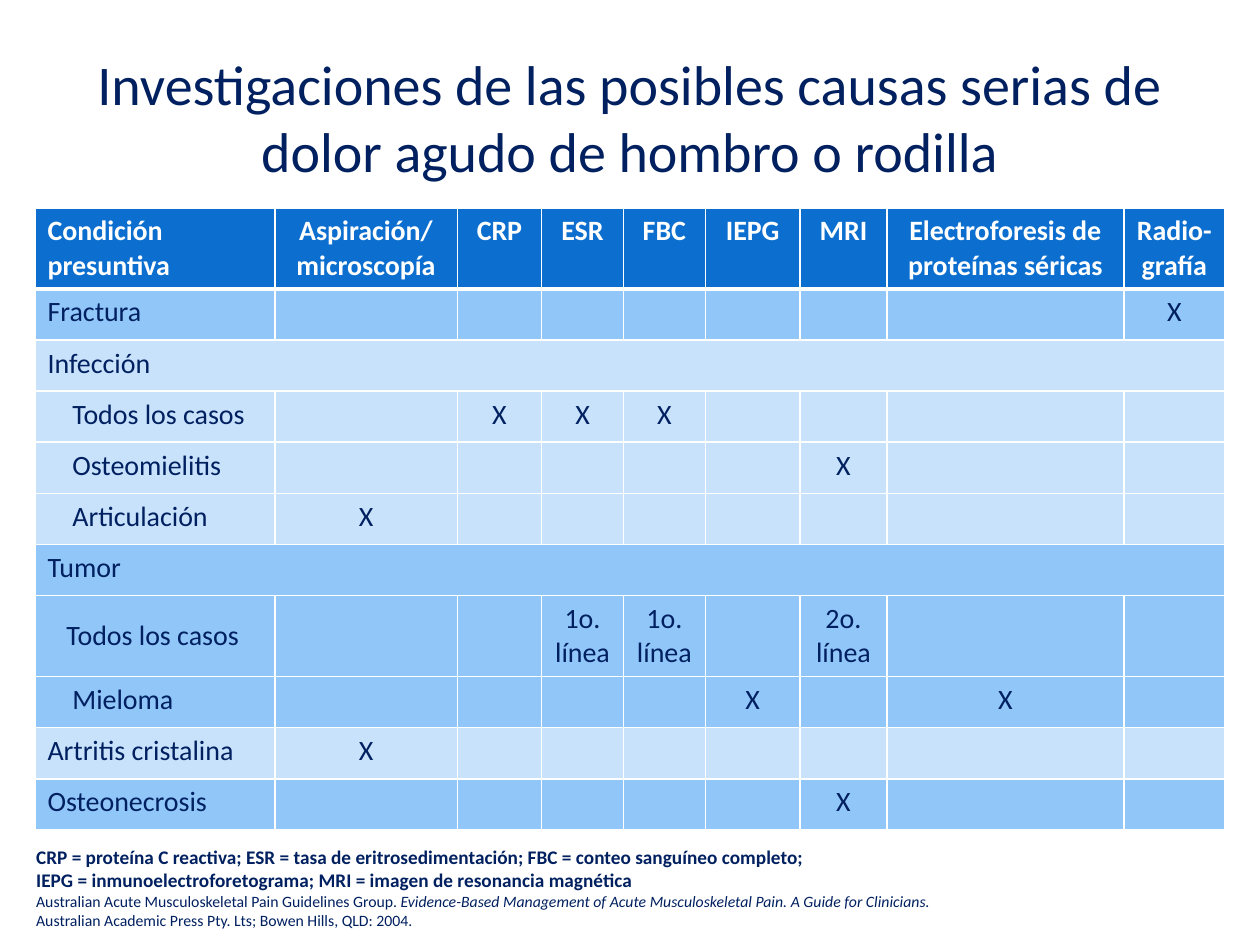
from dataclasses import dataclass

from lxml import etree
from pptx import Presentation
from pptx.dml.color import RGBColor
from pptx.enum.text import MSO_ANCHOR, MSO_AUTO_SIZE, PP_ALIGN
from pptx.oxml.ns import qn
from pptx.util import Cm, Pt

LEFT, CENTER = PP_ALIGN.LEFT, PP_ALIGN.CENTER
TOP, MIDDLE = MSO_ANCHOR.TOP, MSO_ANCHOR.MIDDLE
GROW = MSO_AUTO_SIZE.SHAPE_TO_FIT_TEXT
TITLE_ONLY = 5


@dataclass(frozen=True)
class Theme:
    font: str = "Calibri"
    ink: str = "002060"
    white: str = "FFFFFF"
    header: str = "0C6FCF"
    mid: str = "91C6F9"
    light: str = "C8E2FC"
    title_size: int = 32
    table_size: int = 16
    key_size: int = 11
    source_size: int = 9
    rule: int = 1
    header_rule: int = 3


THEME = Theme()

HEADERS = ["Condición presuntiva", "Aspiración/\nmicroscopía", "CRP", "ESR", "FBC",
           "IEPG", "MRI", "Electroforesis de proteínas séricas", "Radio-grafía"]
COL_WIDTHS = [4.83, 3.68, 1.7, 1.65, 1.65, 1.91, 1.75, 4.78, 2.03]
ROW_HEIGHT = 1.03
CELL_MARGIN = 0.25

CONDITIONS = [
    ("Fractura", 0, THEME.mid, {"Radio-grafía": "X"}),
    ("Infección", 0, THEME.light, None),
    ("Todos los casos", 0.5, THEME.light, {"CRP": "X", "ESR": "X", "FBC": "X"}),
    ("Osteomielitis", 0.5, THEME.light, {"MRI": "X"}),
    ("Articulación", 0.5, THEME.light, {HEADERS[1]: "X"}),
    ("Tumor", 0, THEME.mid, None),
    ("Todos los casos", 0.38, THEME.mid,
     {"ESR": "1o.\nlínea", "FBC": "1o.\nlínea", "MRI": "2o. línea"}),
    ("Mieloma", 0.5, THEME.mid, {"IEPG": "X", HEADERS[7]: "X"}),
    ("Artritis cristalina", 0, THEME.light, {HEADERS[1]: "X"}),
    ("Osteonecrosis", 0, THEME.mid, {"MRI": "X"}),
]
TUMOR_CASES_ROW = 7

ABBREVIATIONS = (
    "CRP = proteína C reactiva; ESR = tasa de eritrosedimentación; "
    "FBC = conteo sanguíneo completo;\n"
    "IEPG = inmunoelectroforetograma; MRI = imagen de resonancia magnética")
SOURCE = [
    ("Australian Acute Musculoskeletal Pain Guidelines Group. ", False),
    ("Evidence-Based Management of Acute Musculoskeletal Pain. "
     "A Guide for Clinicians.\n", True),
    ("Australian Academic Press Pty. Lts; Bowen Hills, QLD: 2004.", False),
]


class Deck:
    def __init__(self, theme):
        self.theme = theme
        self.prs = Presentation()
        self.prs.slide_width, self.prs.slide_height = Cm(25.4), Cm(19.05)
        self.s = None

    def add_slide(self):
        self.s = self.prs.slides.add_slide(self.prs.slide_layouts[TITLE_ONLY])

    def run(self, p, text, size, color, bold=False, italic=False):
        for i, line in enumerate(text.split("\n")):
            if i:
                p.add_line_break()
            if line:
                r = p.add_run()
                r.text = line
                f = r.font
                f.name, f.size, f.bold, f.italic = self.theme.font, Pt(size), bold, italic
                f.color.rgb = RGBColor.from_string(color)

    def title(self, text, x, y, w, h):
        sp = self.s.shapes.title
        sp.left, sp.top, sp.width, sp.height = Cm(x), Cm(y), Cm(w), Cm(h)
        tf = sp.text_frame
        tf.word_wrap, tf.vertical_anchor = True, MIDDLE
        p = tf.paragraphs[0]
        p.alignment = CENTER
        self.run(p, text, self.theme.title_size, self.theme.ink)

    def borders(self, cell, top, bottom):
        tc_pr = cell._tc.get_or_add_tcPr()
        rule = self.theme.rule
        sides = [("L", rule), ("R", rule), ("T", top), ("B", bottom)]
        for i, (side, width) in enumerate(sides):
            ln = etree.Element(qn(f"a:ln{side}"), w=str(Pt(width)))
            fill = etree.SubElement(ln, qn("a:solidFill"))
            etree.SubElement(fill, qn("a:srgbClr"), val=self.theme.white)
            tc_pr.insert(i, ln)

    def cell(self, cell, text, fill, color, align, bold=False, indent=0,
             anchor=TOP, top=THEME.rule, bottom=THEME.rule):
        cell.fill.solid()
        cell.fill.fore_color.rgb = RGBColor.from_string(fill)
        cell.margin_left = Cm(CELL_MARGIN + indent)
        cell.vertical_anchor = anchor
        self.borders(cell, top, bottom)
        if text:
            p = cell.text_frame.paragraphs[0]
            p.alignment = align
            self.run(p, text, self.theme.table_size, color, bold)

    def table(self, x, y):
        t = self.theme
        n_rows, n_cols = len(CONDITIONS) + 1, len(HEADERS)
        table = self.s.shapes.add_table(
            n_rows, n_cols, Cm(x), Cm(y),
            Cm(sum(COL_WIDTHS)), Cm(ROW_HEIGHT * n_rows)).table
        for col, width in zip(table.columns, COL_WIDTHS):
            col.width = Cm(width)
        for row in table.rows:
            row.height = Cm(ROW_HEIGHT)
        for c, text in enumerate(HEADERS):
            self.cell(table.cell(0, c), text, t.header, t.white,
                      CENTER if c else LEFT, bold=True, bottom=t.header_rule)
        for r, (label, indent, fill, marks) in enumerate(CONDITIONS, 1):
            top = t.header_rule if r == 1 else t.rule
            self.cell(table.cell(r, 0), label, fill, t.ink, LEFT, indent=indent,
                      anchor=MIDDLE if r == TUMOR_CASES_ROW else TOP, top=top)
            for c, header in enumerate(HEADERS[1:], 1):
                self.cell(table.cell(r, c), (marks or {}).get(header), fill,
                          t.ink, CENTER, top=top)
            if marks is None:
                table.cell(r, 0).merge(table.cell(r, n_cols - 1))

    def footnote(self, x, y, w, h):
        t = self.theme
        tf = self.s.shapes.add_textbox(Cm(x), Cm(y), Cm(w), Cm(h)).text_frame
        tf.word_wrap, tf.auto_size = True, GROW
        self.run(tf.paragraphs[0], ABBREVIATIONS, t.key_size, t.ink, bold=True)
        p = tf.add_paragraph()
        for text, italic in SOURCE:
            self.run(p, text, t.source_size, t.ink, italic=italic)


def main():
    deck = Deck(THEME)
    deck.add_slide()
    deck.title("Investigaciones de las posibles causas serias de dolor agudo "
               "de hombro o rodilla", 1.27, 0.76, 22.86, 3.18)
    deck.table(0.71, 4.19)
    deck.footnote(0.48, 16.92, 24.2, 1.96)
    deck.prs.save("out.pptx")


if __name__ == "__main__":
    main()
